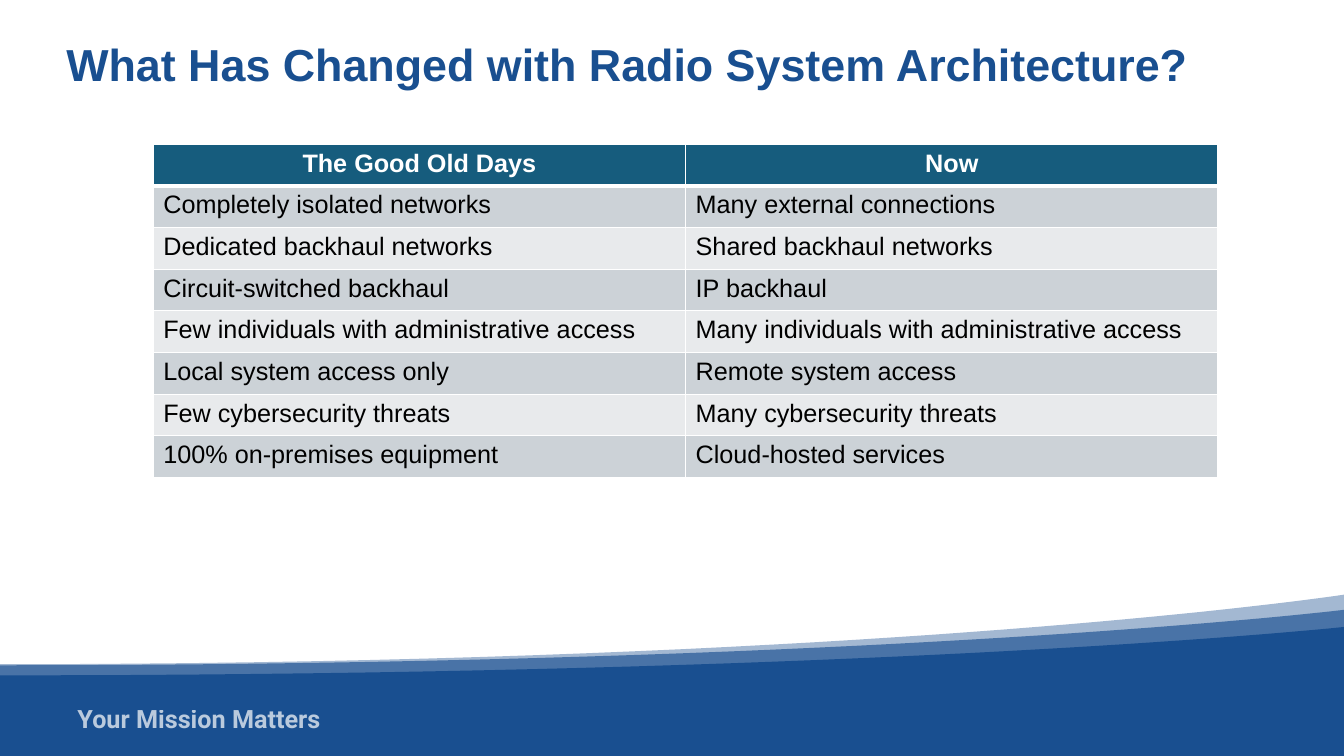
"""Build the slide comparing past and present radio system architecture."""
from dataclasses import dataclass

from lxml import etree
from pptx import Presentation
from pptx import util as u
from pptx.dml.color import RGBColor
from pptx.enum import text
from pptx.oxml.ns import qn

PX = 9144
SLIDE_WIDTH, SLIDE_HEIGHT = 1333, 750
NAVY = RGBColor(0x19, 0x4F, 0x90)
TEAL = RGBColor(0x16, 0x5C, 0x7D)
WHITE = RGBColor(0xFF, 0xFF, 0xFF)
BLACK = RGBColor(0x00, 0x00, 0x00)
BANDS = (RGBColor(0xCC, 0xD2, 0xD7), RGBColor(0xE8, 0xEA, 0xEC))
CURVE_STEPS = 40


@dataclass(frozen=True)
class Wave:
    right_y: int
    left_y: int
    control_x: int
    opacity: int


@dataclass(frozen=True)
class Label:
    words: str
    left: int
    top: int
    width: int
    height: int
    font: str
    size: int
    color: RGBColor
    opacity: int = 100
    line_spacing: float = 1.0


WAVES = (
    Wave(590, 659, 880, 40),
    Wave(605, 660, 881, 65),
    Wave(622, 670, 882, 100),
)
LABELS = (
    Label("Your Mission Matters", 67, 693, 389, 41, "Roboto", 18, WHITE, opacity=70),
    Label("What Has Changed with Radio System Architecture?", 56, 38, 1203, 52,
          "Arial", 32, NAVY, line_spacing=0.9),
)
COMPARISON = (
    ("The Good Old Days", "Now"),
    ("Completely isolated networks", "Many external connections"),
    ("Dedicated backhaul networks", "Shared backhaul networks"),
    ("Circuit-switched backhaul", "IP backhaul"),
    ("Few individuals with administrative access",
     "Many individuals with administrative access"),
    ("Local system access only", "Remote system access"),
    ("Few cybersecurity threats", "Many cybersecurity threats"),
    ("100% on-premises equipment", "Cloud-hosted services"),
)


def px(length: float) -> int:
    """Turn px into EMU."""
    return round(length * PX)


def paint(fill, color: RGBColor, opacity: int = 100) -> None:
    """Make a fill solid."""
    fill.solid()
    fill.fore_color.rgb = color


def set_opacity(element, opacity: int) -> None:
    """Set the opacity of the first colour inside an element."""
    if opacity < 100:
        color = next(element.iter(qn("a:srgbClr")))
        etree.SubElement(color, qn("a:alpha"), val=str(opacity * 1000))


def add_wave(slide, wave: Wave) -> None:
    """Draw a wave that rises from the left to the right edge."""
    points = []
    for step in range(1, CURVE_STEPS + 1):
        t = step / CURVE_STEPS
        rest = 1 - t
        start = rest ** 3 + 3 * rest ** 2 * t
        bend = 3 * rest * t ** 2
        x = start * SLIDE_WIDTH + bend * wave.control_x
        y = start * wave.right_y + (1 - start) * wave.left_y
        points.append((px(x), px(y)))
    points += [(0, px(SLIDE_HEIGHT)), (px(SLIDE_WIDTH), px(SLIDE_HEIGHT))]
    builder = slide.shapes.build_freeform(px(SLIDE_WIDTH), px(wave.right_y))
    builder.add_line_segments(points, close=True)
    shape = builder.convert_to_shape()
    shape.shadow.inherit = False
    shape.line.fill.background()
    paint(shape.fill, NAVY)
    set_opacity(shape.fill._xPr, wave.opacity)


def add_label(slide, label: Label) -> None:
    """Add a bold line of text."""
    box = slide.shapes.add_textbox(
        px(label.left), px(label.top), px(label.width), px(label.height))
    box.text_frame.word_wrap = True
    box.text_frame.text = label.words
    paragraph = box.text_frame.paragraphs[0]
    paragraph.line_spacing = label.line_spacing
    font = paragraph.runs[0].font
    font.name, font.size, font.bold = label.font, u.Pt(label.size), True
    font.color.rgb = label.color
    set_opacity(font._element, label.opacity)


def add_borders(cell, top: int, bottom: int) -> None:
    """Give a cell white borders, with widths in points."""
    properties = cell._tc.get_or_add_tcPr()
    for side, width in (("L", 1), ("R", 1), ("T", top), ("B", bottom)):
        line = etree.SubElement(properties, qn(f"a:ln{side}"), w=str(u.Pt(width)))
        fill = etree.SubElement(line, qn("a:solidFill"))
        etree.SubElement(fill, qn("a:srgbClr"), val=str(WHITE))


def add_comparison(slide) -> None:
    """Add the table with a header and banded rows."""
    table = slide.shapes.add_table(
        len(COMPARISON), 2, px(152), px(143), px(1056), px(331)).table
    for row, entries in enumerate(COMPARISON):
        header = row == 0
        for column, words in enumerate(entries):
            cell = table.cell(row, column)
            add_borders(cell, 3 if row == 1 else 1, 3 if header else 1)
            paint(cell.fill, TEAL if header else BANDS[(row - 1) % 2])
            cell.text_frame.text = words
            paragraph = cell.text_frame.paragraphs[0]
            if header:
                paragraph.alignment = text.PP_ALIGN.CENTER
            font = paragraph.runs[0].font
            font.name, font.size, font.bold = "Arial", u.Pt(18), header
            font.color.rgb = WHITE if header else BLACK


def main() -> None:
    """Build and save the presentation."""
    presentation = Presentation()
    presentation.slide_width = px(SLIDE_WIDTH)
    presentation.slide_height = px(SLIDE_HEIGHT)
    slide = presentation.slides.add_slide(presentation.slide_layouts[6])
    for wave in WAVES:
        add_wave(slide, wave)
    for label in LABELS:
        add_label(slide, label)
    add_comparison(slide)
    presentation.save("out.pptx")


if __name__ == "__main__":
    main()
